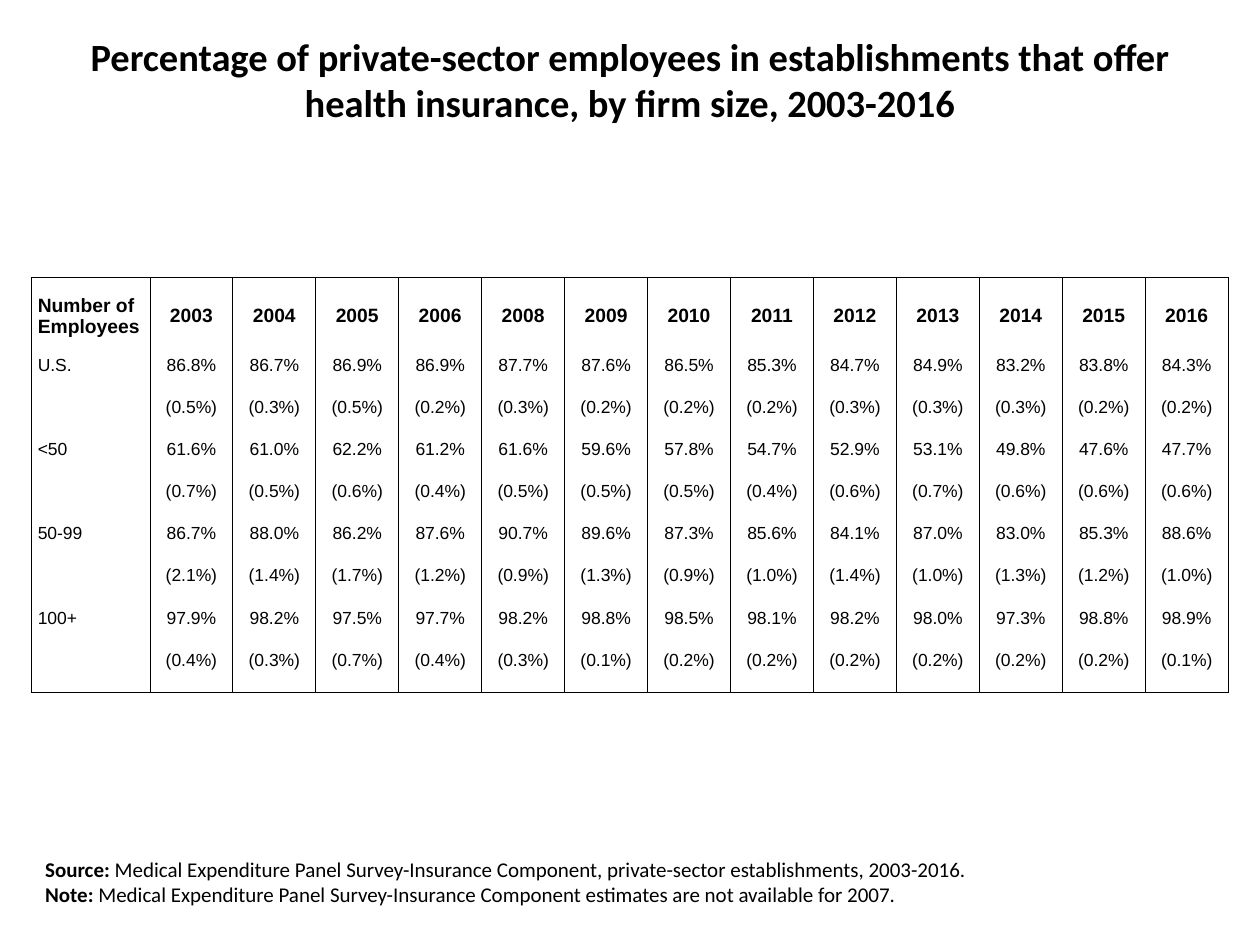
from dataclasses import dataclass
from typing import NamedTuple

from lxml.etree import SubElement
from pptx import Presentation
from pptx.dml.color import RGBColor
from pptx.enum.text import MSO_ANCHOR as Anchor, PP_ALIGN as Align
from pptx.oxml.ns import qn
from pptx.util import Inches, Pt


@dataclass(frozen=True)
class Theme:
    ink: str = "000000"
    text_font: str = "Calibri"
    table_font: str = "Arial"
    title_size: float = 22
    header_size: float = 11
    body_size: float = 10
    note_size: float = 12
    border_width: float = 0.5


class Area(NamedTuple):
    """A rectangle in inches."""
    left: float
    top: float
    width: float
    height: float

    def lengths(self) -> list:
        return [Inches(value) for value in self]


class FirmSize(NamedTuple):
    label: str
    rates: str
    errors: str


THEME = Theme()
SLIDE_WIDTH, SLIDE_HEIGHT = 10, 7.5
TITLE_AREA = Area(0.5, 0.17, 9, 0.92)
TABLE_AREA = Area(0.25, 2.2, 9.5, 3.3)
NOTES_AREA = Area(0.26, 6.75, 7.58, 0.58)
LABEL_WIDTH, HEADER_HEIGHT = 0.94, 0.62
LABEL_INDENT, NOTE_INDENT = 0.05, 0.38
NO_GRID_STYLE = "{2D5ABB26-0587-4C30-8999-92F81FD0307C}"

TITLE = ("Percentage of private-sector employees in establishments that offer "
         "health insurance, by firm size, 2003-2016")
YEARS = [str(year) for year in range(2003, 2017) if year != 2007]
FIRM_SIZES = [
    FirmSize("U.S.",
             "86.8 86.7 86.9 86.9 87.7 87.6 86.5 85.3 84.7 84.9 83.2 83.8 84.3",
             "0.5 0.3 0.5 0.2 0.3 0.2 0.2 0.2 0.3 0.3 0.3 0.2 0.2"),
    FirmSize("<50",
             "61.6 61.0 62.2 61.2 61.6 59.6 57.8 54.7 52.9 53.1 49.8 47.6 47.7",
             "0.7 0.5 0.6 0.4 0.5 0.5 0.5 0.4 0.6 0.7 0.6 0.6 0.6"),
    FirmSize("50-99",
             "86.7 88.0 86.2 87.6 90.7 89.6 87.3 85.6 84.1 87.0 83.0 85.3 88.6",
             "2.1 1.4 1.7 1.2 0.9 1.3 0.9 1.0 1.4 1.0 1.3 1.2 1.0"),
    FirmSize("100+",
             "97.9 98.2 97.5 97.7 98.2 98.8 98.5 98.1 98.2 98.0 97.3 98.8 98.9",
             "0.4 0.3 0.7 0.4 0.3 0.1 0.2 0.2 0.2 0.2 0.2 0.2 0.1"),
]
NOTES = [
    ("Source: ", "Medical Expenditure Panel Survey-Insurance Component, "
                 "private-sector establishments, 2003-2016."),
    ("Note: ", "Medical Expenditure Panel Survey-Insurance Component estimates "
               "are not available for 2007."),
]


def style_font(font, name: str, size: float, bold: bool) -> None:
    font.name, font.size, font.bold = name, Pt(size), bold
    font.color.rgb = RGBColor.from_string(THEME.ink)


def indent(para, left: float, first_line: float = 0) -> None:
    properties = para._p.get_or_add_pPr()
    properties.set("marL", str(Inches(left)))
    properties.set("indent", str(Inches(first_line)))


def set_borders(cell, sides: str) -> None:
    """Draw the named sides (L, R, T, B) and clear the others."""
    properties = cell._tc.get_or_add_tcPr()
    for side in "LRTB":
        line = SubElement(properties, qn(f"a:ln{side}"), w=str(Pt(THEME.border_width)))
        if side in sides:
            fill = SubElement(line, qn("a:solidFill"))
            SubElement(fill, qn("a:srgbClr"), val=THEME.ink)
        else:
            SubElement(line, qn("a:noFill"))


def add_text_frame(page, area: Area):
    frame = page.shapes.add_textbox(*area.lengths()).text_frame
    frame.word_wrap = True
    return frame


def add_title(page) -> None:
    frame = add_text_frame(page, TITLE_AREA)
    frame.text = TITLE
    frame.vertical_anchor = Anchor.MIDDLE
    para = frame.paragraphs[0]
    para.alignment = Align.CENTER
    style_font(para.runs[0].font, THEME.text_font, THEME.title_size, True)


def table_rows() -> list[list[str]]:
    rows = [["Number of Employees", *YEARS]]
    for firm in FIRM_SIZES:
        rows.append([firm.label, *(f"{rate}%" for rate in firm.rates.split())])
        rows.append(["", *(f"({error}%)" for error in firm.errors.split())])
    return rows


def fill_cell(cell, text: str, is_header: bool, is_label: bool, sides: str) -> None:
    cell.margin_left = cell.margin_right = cell.margin_top = cell.margin_bottom = 0
    cell.vertical_anchor = Anchor.MIDDLE if is_header else Anchor.TOP
    set_borders(cell, sides)
    cell.fill.background()
    if not text:
        return
    cell.text_frame.text = text
    para = cell.text_frame.paragraphs[0]
    if is_label:
        indent(para, LABEL_INDENT)
    else:
        para.alignment = Align.CENTER
    size = THEME.header_size if is_header else THEME.body_size
    style_font(para.runs[0].font, THEME.table_font, size, is_header)


def add_rate_table(page) -> None:
    rows = table_rows()
    last = len(rows) - 1
    frame = page.shapes.add_table(len(rows), len(rows[0]), *TABLE_AREA.lengths())
    table = frame.table
    table.first_row = table.horz_banding = False
    table._tbl.tblPr.find(qn("a:tableStyleId")).text = NO_GRID_STYLE

    # The label column and header row are fixed; the rest share equally
    year_width = (TABLE_AREA.width - LABEL_WIDTH) / len(YEARS)
    row_height = (TABLE_AREA.height - HEADER_HEIGHT) / last
    for index, column in enumerate(table.columns):
        column.width = Inches(year_width if index else LABEL_WIDTH)
    for index, row in enumerate(table.rows):
        row.height = Inches(row_height if index else HEADER_HEIGHT)

    for r, texts in enumerate(rows):
        sides = "LR" + ("T" if r == 0 else "") + ("B" if r == last else "")
        for c, text in enumerate(texts):
            fill_cell(table.cell(r, c), text, r == 0, c == 0, sides)


def add_notes(page) -> None:
    frame = add_text_frame(page, NOTES_AREA)
    for index, (heading, sentence) in enumerate(NOTES):
        para = frame.add_paragraph() if index else frame.paragraphs[0]
        indent(para, NOTE_INDENT, -NOTE_INDENT)
        for text, bold in ((heading, True), (sentence, False)):
            span = para.add_run()
            span.text = text
            style_font(span.font, THEME.text_font, THEME.note_size, bold)


def main() -> None:
    deck = Presentation()
    deck.slide_width, deck.slide_height = Inches(SLIDE_WIDTH), Inches(SLIDE_HEIGHT)
    page = deck.slides.add_slide(deck.slide_layouts[6])
    add_title(page)
    add_rate_table(page)
    add_notes(page)
    deck.save("out.pptx")


if __name__ == "__main__":
    main()
